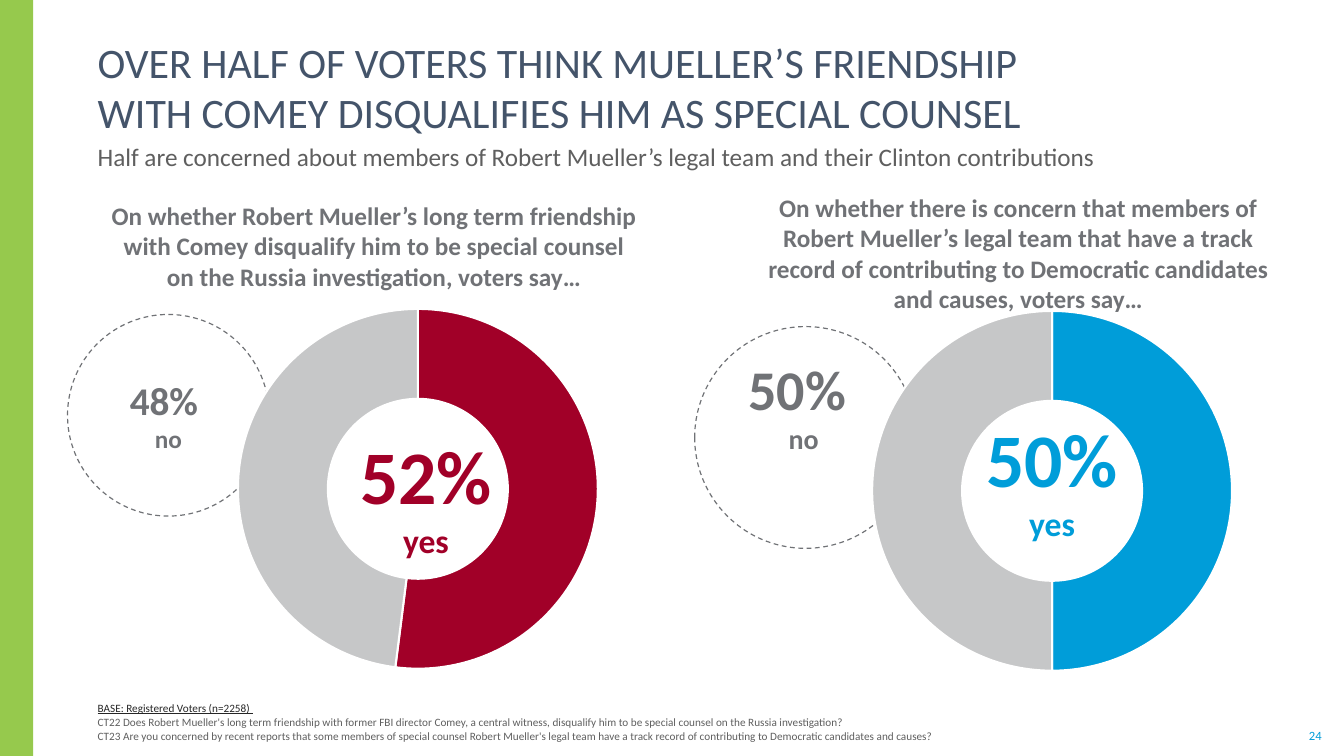
from dataclasses import dataclass

from lxml.etree import SubElement
from pptx import Presentation
from pptx.chart.data import CategoryChartData
from pptx.dml.color import RGBColor
from pptx.enum.chart import XL_CHART_TYPE as ChartType
from pptx.enum.dml import MSO_LINE_DASH_STYLE as Dash
from pptx.enum.shapes import MSO_SHAPE as Preset
from pptx.enum.text import MSO_ANCHOR as Anchor, PP_ALIGN as Align
from pptx.oxml.ns import qn
from pptx.util import Inches, Pt


@dataclass(frozen=True)
class Theme:
    font: str = "Calibri"
    white: str = "FFFFFF"
    green: str = "96C94D"
    navy: str = "44546A"
    body: str = "5F5F5F"
    ink: str = "262626"
    grey: str = "707276"
    light: str = "C6C7C8"
    red: str = "A10028"
    blue: str = "009DD9"
    title: int = 30
    text: int = 18
    note: int = 8
    page: int = 9
    chart: int = 10
    yes_value: int = 54
    yes_word: int = 24


THEME = Theme()


def rgb(value):
    return RGBColor.from_string(value)


def style_font(font, size, color, bold=False):
    font.name = THEME.font
    font.size = Pt(size)
    font.color.rgb = rgb(color)
    font.bold = bold


def add_text(slide, box, lines, size, color, bold=False, align=Align.LEFT,
             anchor=Anchor.TOP, pad=(0.1, 0.05), wrap=True):
    frame = slide.shapes.add_textbox(*map(Inches, box)).text_frame
    frame.word_wrap = wrap
    frame.vertical_anchor = anchor
    frame.margin_left = frame.margin_right = Inches(pad[0])
    frame.margin_top = frame.margin_bottom = Inches(pad[1])
    frame.text = "\n".join(lines)
    for paragraph in frame.paragraphs:
        paragraph.alignment = align
        style_font(paragraph.font, size, color, bold)
    return frame


def add_preset(slide, preset, box, fill=None, dashed=False):
    shape = slide.shapes.add_shape(preset, *map(Inches, box))
    shape.shadow.inherit = False
    if fill:
        shape.fill.solid()
        shape.fill.fore_color.rgb = rgb(fill)
    else:
        shape.fill.background()
    if dashed:
        shape.line.color.rgb = rgb(THEME.grey)
        shape.line.width = Pt(0.85)
        shape.line.dash_style = Dash.DASH
    else:
        shape.line.fill.background()
    return shape


def write_share(frame, value, word, value_size, word_size, color):
    """Put a large percentage above its answer word."""
    paragraph = frame.paragraphs[0]
    paragraph.alignment = Align.CENTER
    style_font(paragraph.font, value_size, color, bold=True)
    paragraph.add_run().text = value
    paragraph.add_line_break()
    answer = paragraph.add_run()
    answer.text = word
    answer.font.size = Pt(word_size)


def add_layout(chart, width_share, height_share):
    """Centre the plot at the given shares of the chart frame."""
    plot_area = chart.plots[0]._element.getparent()
    layout = plot_area.find(qn("c:layout"))
    if layout is None:
        layout = SubElement(plot_area, qn("c:layout"))
        plot_area.insert(0, layout)
    manual = SubElement(layout, qn("c:manualLayout"))
    settings = (("layoutTarget", "inner"), ("xMode", "edge"), ("yMode", "edge"),
                ("x", (1 - width_share) / 2), ("y", (1 - height_share) / 2),
                ("w", width_share), ("h", height_share))
    for tag, value in settings:
        SubElement(manual, qn(f"c:{tag}")).set("val", str(value))


def add_doughnut(slide, left, top, shares, color):
    width, height, diameter = 5.53, 3.86, 3.57
    data = CategoryChartData()
    data.categories = ["1", "2"]
    data.add_series("Series 1", shares)
    chart = slide.shapes.add_chart(
        ChartType.DOUGHNUT, *map(Inches, (left, top, width, height)), data).chart
    chart.has_legend = chart.has_title = False
    style_font(chart.font, THEME.chart, THEME.body)
    add_layout(chart, diameter / width, diameter / height)
    plot = chart.plots[0]
    plot.vary_by_categories = False
    plot._element.find(qn("c:holeSize")).set("val", "75")
    for index, fill in enumerate((color, THEME.light)):
        slice_format = plot.series[0].points[index].format
        slice_format.fill.solid()
        slice_format.fill.fore_color.rgb = rgb(fill)
        slice_format.line.color.rgb = rgb(THEME.white)
        slice_format.line.width = Pt(1.5)


def add_yes_label(slide, left, top, value, color):
    label = add_preset(slide, Preset.OVAL, (left, top, 3.37, 3.55))
    label.text_frame.vertical_anchor = Anchor.MIDDLE
    write_share(label.text_frame, value, "yes", THEME.yes_value, THEME.yes_word, color)


def add_question(slide, box, question):
    add_text(slide, box, [question], THEME.text, THEME.grey, bold=True, align=Align.CENTER)


def add_headings(slide):
    add_preset(slide, Preset.RECTANGLE, (0, 0, 0.33, 7.5), fill=THEME.green)
    add_text(slide, (12.97, 7.22, 0.15, 0.15), ["24"], THEME.page, THEME.blue,
             align=Align.CENTER, anchor=Anchor.MIDDLE, pad=(0, 0), wrap=False)
    add_text(slide, (0.87, 0.74, 11.91, 0.62),
             ["OVER HALF OF VOTERS THINK MUELLER’S FRIENDSHIP\v"
              "WITH COMEY DISQUALIFIES HIM AS SPECIAL COUNSEL"],
             THEME.title, THEME.navy, anchor=Anchor.BOTTOM, pad=(0.1, 0))
    add_text(slide, (0.87, 1.4, 11.9, 0.34),
             ["Half are concerned about members of Robert Mueller’s legal team "
              "and their Clinton contributions"],
             THEME.text, THEME.body, pad=(0.1, 0))


def add_footnotes(slide):
    notes = add_text(slide, (0.87, 6.97, 11.91, 0.4), [
        "BASE: Registered Voters (n=2258) ",
        "CT22 Does Robert Mueller's long term friendship with former FBI director Comey, "
        "a central witness, disqualify him to be special counsel on the Russia investigation?",
        "CT23 Are you concerned by recent reports that some members of special counsel "
        "Robert Mueller's legal team have a track record of contributing to Democratic "
        "candidates and causes?",
    ], THEME.note, THEME.body, anchor=Anchor.BOTTOM, pad=(0.1, 0))
    base, *questions = notes.paragraphs
    base.font.underline = True
    base.font.color.rgb = rgb(THEME.ink)
    for question in questions:
        question.space_before = Pt(0.6)


def main():
    deck = Presentation()
    deck.slide_width, deck.slide_height = Inches(13.33), Inches(7.5)
    slide = deck.slides.add_slide(deck.slide_layouts[6])
    add_headings(slide)
    add_footnotes(slide)

    friendship_no = add_preset(slide, Preset.OVAL, (0.67, 3.12, 2, 2), dashed=True)
    friendship_no.text_frame.vertical_anchor = Anchor.MIDDLE
    write_share(friendship_no.text_frame, "48% ", "no", 28, 18, THEME.grey)
    add_doughnut(slide, 1.38, 2.92, (52, 48), THEME.red)
    add_yes_label(slide, 2.54, 3.13, "52%", THEME.red)
    add_question(slide, (1, 1.94, 5.42, 1.01),
                 "On whether Robert Mueller’s long term friendship with Comey disqualify "
                 "him to be special counsel on the Russia investigation, voters say…")

    add_preset(slide, Preset.OVAL, (6.89, 3.24, 2.2, 2.2), dashed=True)
    add_doughnut(slide, 7.67, 2.94, (50, 50), THEME.blue)
    add_yes_label(slide, 8.75, 2.96, "50%", THEME.blue)
    add_question(slide, (7.36, 1.86, 5.48, 1.31),
                 "On whether there is concern that members of Robert Mueller’s legal team "
                 "that have a track record of contributing to Democratic candidates and "
                 "causes, voters say…")
    concern_no = add_text(slide, (6.88, 3.47, 2.18, 1.11), [""], 40, THEME.grey)
    write_share(concern_no, "50% ", "no", 40, 20, THEME.grey)

    deck.save("out.pptx")


if __name__ == "__main__":
    main()
